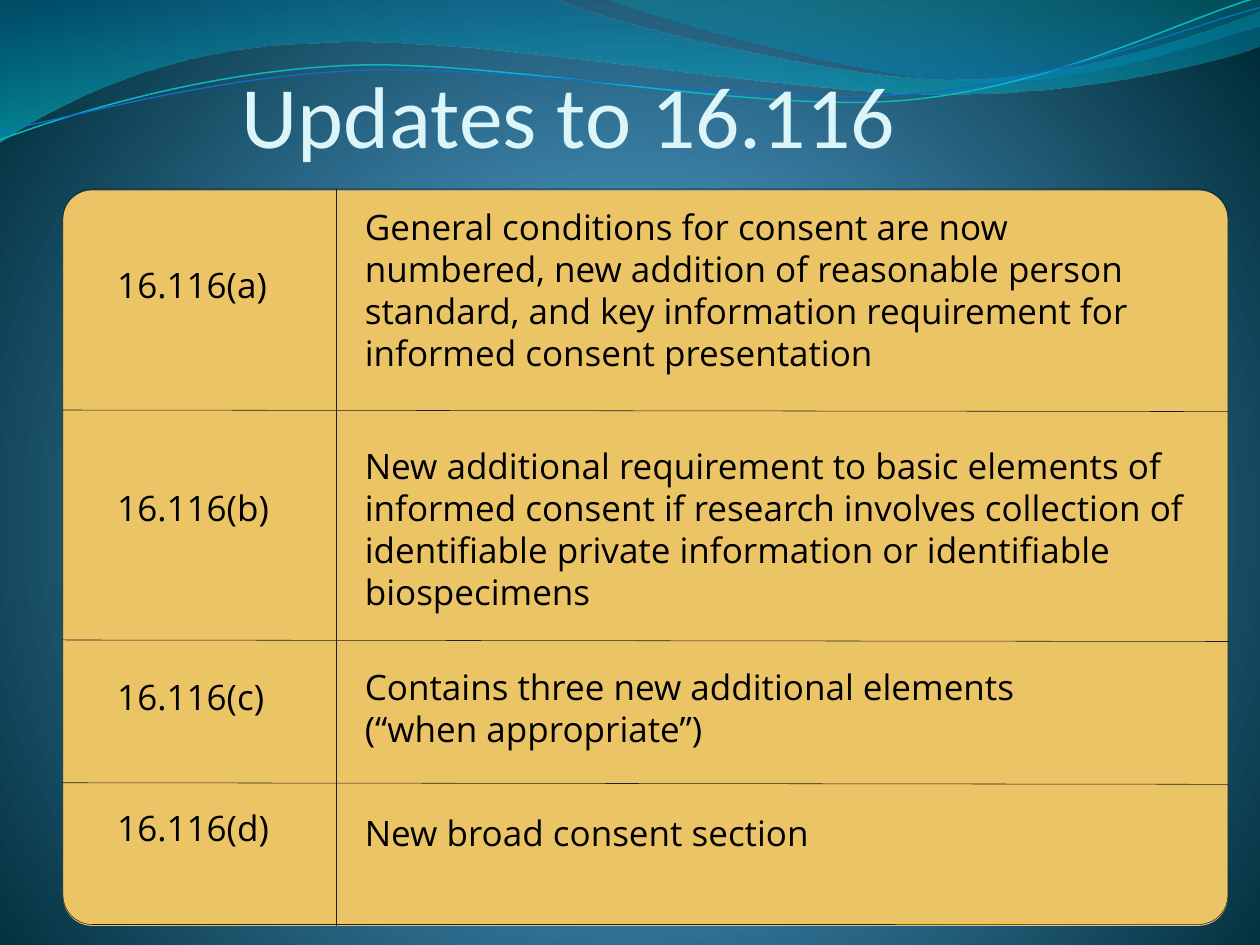
import pptx
import pptx.util
import pptx.dml.color
import pptx.enum.shapes
import pptx.enum.text
import pptx.oxml
import pptx.oxml.ns

Pt = pptx.util.Pt
qn = pptx.oxml.ns.qn

COLORS = {
    "glow": "4AA0D6", "mid": "4C98C7", "deep": "002C38",
    "wave_blue": "0074A1", "wave_aqua": "00C6CF",
    "crest_teal": "00A1A9", "crest_blue": "008BBF",
    "aqua_line": "0AB8BF", "blue_line": "0F6FC6",
    "title": "DBF5F9", "panel": "EBC465", "rule": "231F20", "text": "000000",
}

WAVES = [
    ((0, 0), [
        [(316.8, -0.7)],
        [(342.7, 12.2), (478, 45.4), (545.8, 45.4)],
        [(614.2, 45.4), (689.8, 18.7), (720, 6.5)],
        [(720.7, 25.9)],
        [(707.8, 31.7), (626.4, 54.7), (537.1, 54)],
        [(447.8, 54), (275, 20.2), (185, 24.5)],
        [(92.9, 25.9), (33.1, 59.8), (-0.7, 81.4)],
    ], [(0, "wave_blue", 45), (100, "wave_aqua", 55)]),
    ((344.9, -0.7), [
        [(366.5, 7.9), (491, 44.6), (553.7, 46.8)],
        [(616.3, 49.7), (691.9, 23), (720, 15.1)],
        [(720, 0)],
    ], [(0, "crest_teal", 30), (80, "crest_blue", 45)]),
]
STRANDS = [
    ((0, 79.9), [
        [(34.6, 67), (113.8, 41), (199.4, 37.4)],
        [(284.4, 33.8), (427, 64.1), (513.4, 57.6)],
        [(599.8, 51.1), (675.4, 10.8), (718.6, -1.4)],
    ], "aqua_line", 0.85),
    ((0, 74.9), [
        [(33.8, 69.1), (118.1, 43.9), (203.8, 40.3)],
        [(290.2, 36.7), (429.8, 60.5), (516.2, 54)],
        [(601.9, 48.2), (677.5, 15.1), (720, 4.3)],
    ], "blue_line", 0.75),
]

SECTIONS = [
    ("16.116(a)", 42.5, 29.5, "General conditions for consent are now numbered, new addition of "
     "reasonable person standard, and key information requirement for informed consent "
     "presentation", 9.4, 471.6, 92.9),
    ("16.116(b)", 169.9, 33.1, "New additional requirement to basic elements of informed consent "
     "if research involves collection of identiﬁable private information or identiﬁable "
     "biospecimens", 146.2, 485.3, 92.9),
    ("16.116(c)", 277.9, 31.7, "Contains three new additional elements (“when appropriate”)",
     272.2, 390.2, 24.5),
    ("16.116(d)", 352.8, 38.2, "New broad consent section", 355.7, 308.9, 40.3),
]
ROW_RULES = [126, 257.4, 339]


def color(name):
    return pptx.dml.color.RGBColor.from_string(COLORS[name])


def gradient(stops, direction):
    marks = "".join(
        f'<a:gs pos="{pos * 1000}"><a:srgbClr val="{COLORS[name]}">'
        f'<a:alpha val="{alpha * 1000}"/></a:srgbClr></a:gs>'
        for pos, name, alpha in stops)
    return pptx.oxml.parse_xml(
        f'<a:gradFill {pptx.oxml.ns.nsdecls("a")} rotWithShape="1">'
        f'<a:gsLst>{marks}</a:gsLst>{direction}</a:gradFill>')


def swap_solid_fill(parent, gradient_fill):
    parent.replace(parent.find(qn("a:solidFill")), gradient_fill)


def bend(outline, steps):
    segments = iter(outline._element.findall(".//" + qn("a:lnTo")))
    for step in steps:
        first, *others = [next(segments) for _ in step]
        if others:
            first.tag = qn("a:cubicBezTo")
            for segment in others:
                first.append(segment[0])
                segment.getparent().remove(segment)


def add_outline(slide, start, steps, close):
    builder = slide.shapes.build_freeform(Pt(start[0]), Pt(start[1]))
    builder.add_line_segments([(Pt(x), Pt(y)) for step in steps for x, y in step], close=close)
    outline = builder.convert_to_shape()
    bend(outline, steps)
    outline.shadow.inherit = False
    return outline


def add_backdrop(slide):
    slide.background.fill.solid()
    background = slide._element.find(".//" + qn("p:bgPr"))
    swap_solid_fill(background, gradient(
        [(0, "glow", 100), (25, "mid", 100), (100, "deep", 100)],
        '<a:path path="circle"><a:fillToRect l="10000" t="110000" r="10000" b="100000"/>'
        '</a:path>'))
    for start, steps, stops in WAVES:
        wave = add_outline(slide, start, steps, True)
        wave.line.fill.background()
        wave.fill.solid()
        swap_solid_fill(wave._element.spPr, gradient(stops, '<a:lin ang="5400000" scaled="1"/>'))
    for start, steps, name, width in STRANDS:
        strand = add_outline(slide, start, steps, False)
        strand.fill.background()
        strand.line.color.rgb = color(name)
        strand.line.width = Pt(width)


def add_run(paragraph, words, font, size, name):
    run = paragraph.add_run()
    run.text = words
    run.font.name = font
    run.font.size = Pt(size)
    run.font.color.rgb = color(name)


def clear_margins(frame):
    frame.margin_left = frame.margin_top = frame.margin_right = frame.margin_bottom = 0


def place_title(slide, left, top, width, height):
    title = slide.shapes.title
    slide.shapes._spTree.append(title._element)
    title.left, title.top, title.width, title.height = map(Pt, (left, top, width, height))
    frame = title.text_frame
    frame.auto_size = pptx.enum.text.MSO_AUTO_SIZE.NONE
    frame.vertical_anchor = pptx.enum.text.MSO_ANCHOR.BOTTOM
    clear_margins(frame)
    frame.margin_top = Pt(3.6)
    paragraph = frame.paragraphs[0]
    paragraph.alignment = pptx.enum.text.PP_ALIGN.LEFT
    add_run(paragraph, "Updates to 16.116", "Calibri", 50, "title")


def add_panel(slide, left, top, width, height):
    panel = slide.shapes.add_shape(
        pptx.enum.shapes.MSO_SHAPE.ROUNDED_RECTANGLE, *map(Pt, (left, top, width, height)))
    panel.adjustments[0] = 0.04
    panel.shadow.inherit = False
    return panel


def add_rule(slide, x1, y1, x2, y2):
    rule = slide.shapes.add_connector(
        pptx.enum.shapes.MSO_CONNECTOR.STRAIGHT, *map(Pt, (x1, y1, x2, y2)))
    rule.line.color.rgb = color("rule")
    rule.line.width = Pt(0.3)
    rule._element.spPr.append(
        pptx.oxml.parse_xml(f'<a:effectLst {pptx.oxml.ns.nsdecls("a")}/>'))


def add_words(slide, words, left, top, width, height):
    box = slide.shapes.add_textbox(*map(Pt, (left, top, width, height)))
    frame = box.text_frame
    frame.word_wrap = True
    clear_margins(frame)
    paragraph = frame.paragraphs[0]
    paragraph.line_spacing = Pt(24)
    add_run(paragraph, words, "Open Sans", 20, "text")


def add_section_grid(slide, left, top, width, height):
    panel = add_panel(slide, left, top + 0.8, width, height)
    panel.fill.solid()
    panel.fill.fore_color.rgb = color("panel")
    panel.line.fill.background()
    border = add_panel(slide, left, top, width, height)
    border.fill.background()
    border.line.color.rgb = color("rule")
    border.line.width = Pt(0.3)

    divider = left + 156.4
    add_rule(slide, divider, top, divider, top + height + 0.8)
    for offset in ROW_RULES:
        add_rule(slide, left - 0.4, top + offset + 0.3, left + width + 0.4, top + offset + 1.2)
    for (section, section_top, section_height,
         description, description_top, description_width, description_height) in SECTIONS:
        add_words(slide, section, left + 31, top + section_top, 95.8, section_height)
        add_words(slide, description, left + 172.5, top + description_top,
                  description_width, description_height)


def main():
    deck = pptx.Presentation()
    deck.slide_width, deck.slide_height = Pt(720), Pt(540)
    slide = deck.slides.add_slide(deck.slide_layouts[5])
    add_backdrop(slide)
    place_title(slide, 138.2, 30.2, 545.8, 64.8)
    add_section_grid(slide, 36, 108, 665.7, 420.3)
    deck.save("out.pptx")


if __name__ == "__main__":
    main()
